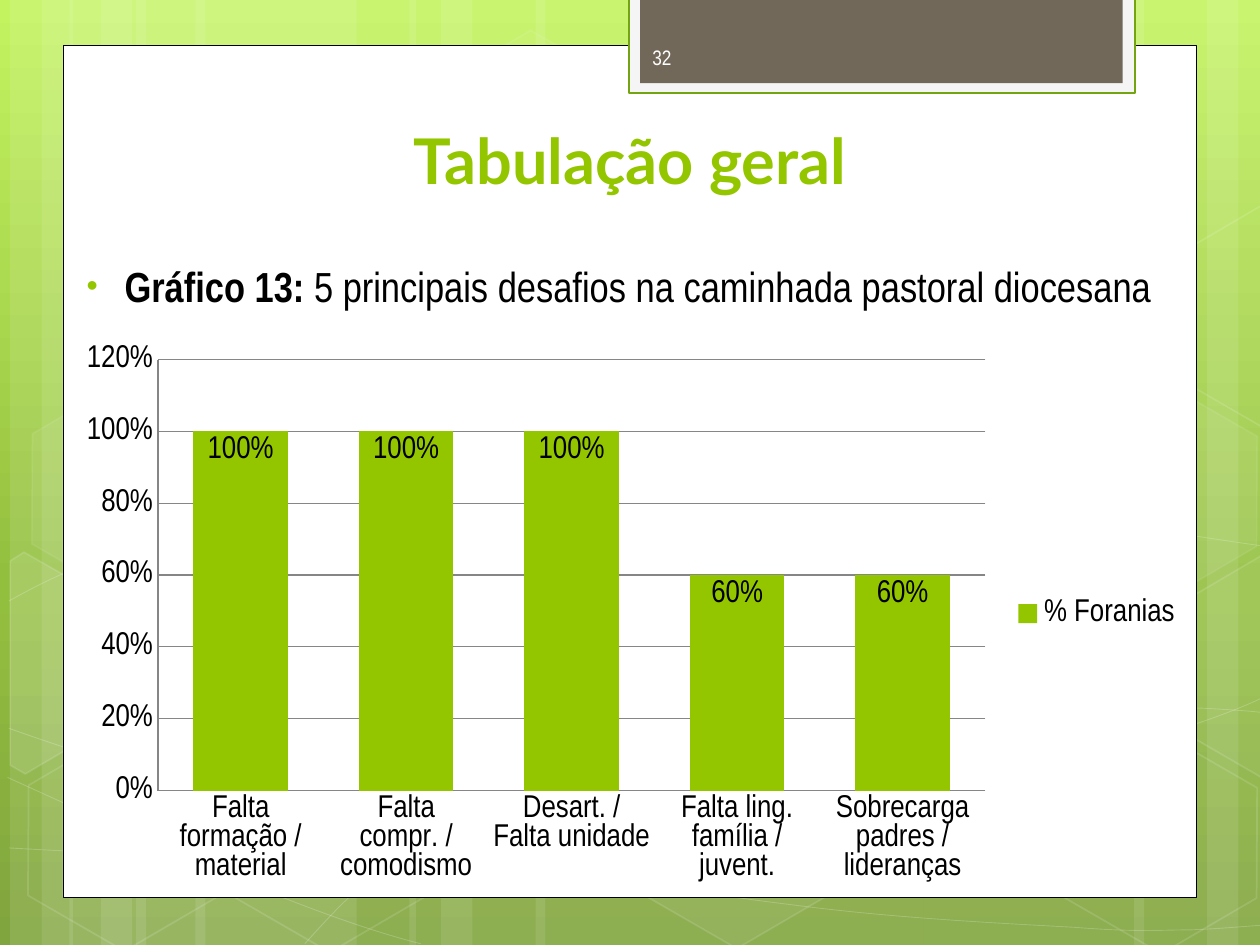
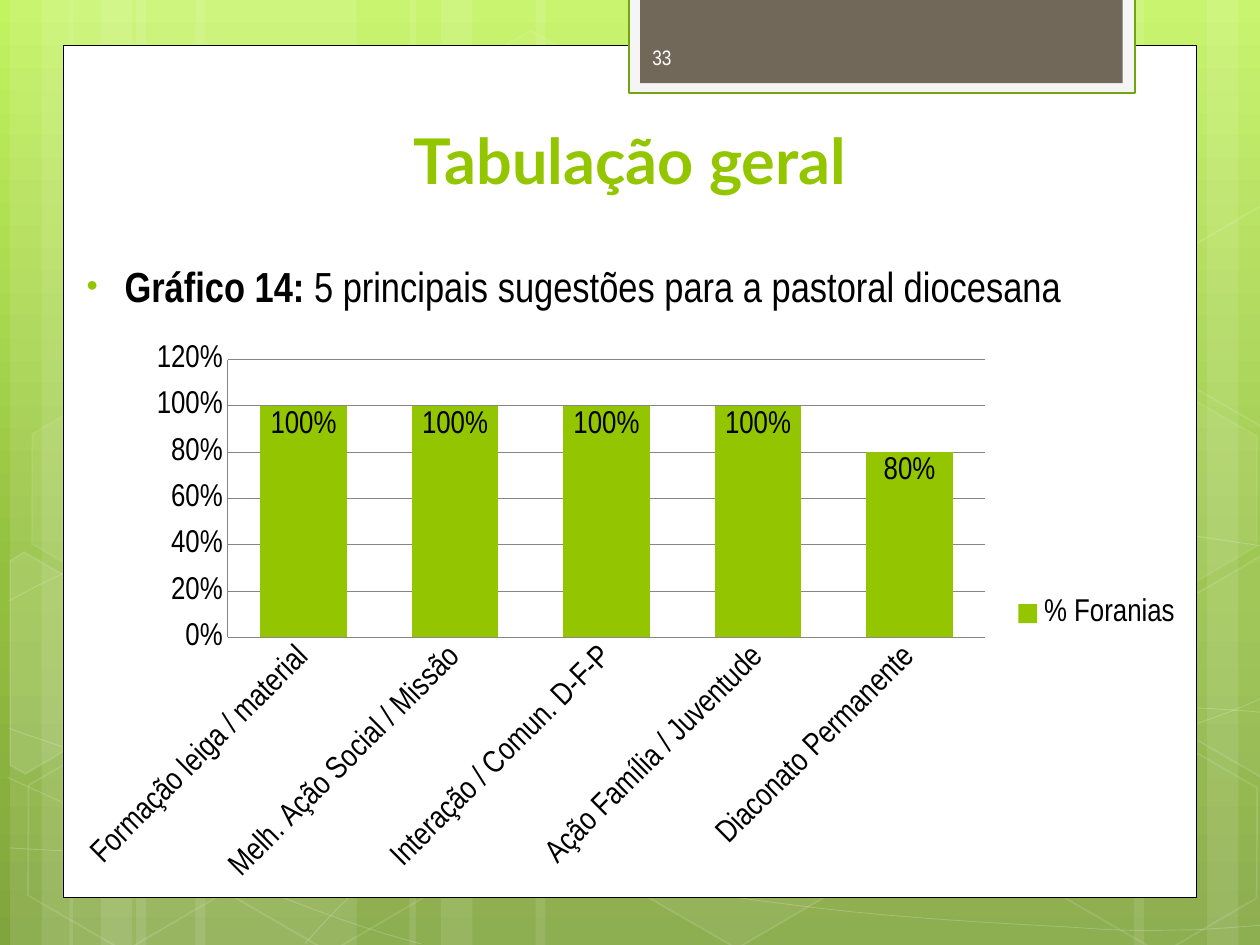
from math import cos, radians, sin

from lxml.etree import SubElement
from pptx import Presentation
from pptx.chart.data import CategoryChartData
from pptx.dml.color import RGBColor
from pptx.enum.chart import XL_CHART_TYPE, XL_LABEL_POSITION, XL_LEGEND_POSITION, XL_TICK_MARK
from pptx.enum.shapes import MSO_SHAPE as SHAPE
from pptx.enum.text import MSO_ANCHOR as ANCHOR, PP_ALIGN as ALIGN
from pptx.oxml.ns import qn
from pptx.util import Inches, Pt

WHITE = RGBColor(0xFF, 0xFF, 0xFF)
BLACK = RGBColor(0x00, 0x00, 0x00)
GREEN = RGBColor(0x94, 0xC6, 0x00)
DARK_GREEN = RGBColor(0x74, 0xA5, 0x10)
GREY = RGBColor(0x86, 0x86, 0x86)
PALE = RGBColor(0xF5, 0xF5, 0xF5)
BROWN = RGBColor(0x71, 0x68, 0x5A)
NUMBER_WHITE = RGBColor(0xFE, 0xFE, 0xFE)
BACKGROUND = [(0, "C3F35F"), (62, "93BF3F"), (100, "81A53E")]
BODY_FONT, TITLE_FONT = "Arial Narrow", "Lato"

# Backdrop: stripes as (left, width)
STRIPES = [(1.08, 1.75), (0.08, 0.5), (0.33, 0.83), (1.55, 1.75), (0.55, 0.5), (0.8, 0.83),
           (7.33, 1.75), (9.58, 0.5), (9, 0.83), (4.25, 3.08), (3.25, 0.5), (3.5, 0.83)]

# Backdrop: curves as a start point, then two control points and an end point for each arc
CURVES = [
    [(0.07, 6.73), (0.61, 6.76), (1.15, 6.79), (1.9, 6.78), (2.65, 6.77), (3.58, 6.75), (4.58, 6.65),
     (5.58, 6.55), (7, 6.36), (7.92, 6.17), (8.83, 5.98), (9.77, 5.68), (10.07, 5.51)],
    [(0.07, 4.77), (0.36, 4.61), (0.65, 4.46), (1.21, 4.31), (1.78, 4.16), (2.59, 3.94), (3.47, 3.87),
     (4.36, 3.8), (5.44, 3.79), (6.54, 3.87), (7.64, 3.95), (9.47, 4.26), (10.07, 4.34)],
    [(0.06, 6.17), (1.27, 6.72), (2.47, 7.27), (3.34, 7.49)],
    [(0.07, 5.78), (0.38, 5.89), (0.7, 6), (1.28, 6.16), (1.86, 6.31), (2.73, 6.56), (3.57, 6.73),
     (4.4, 6.9), (5.45, 7.08), (6.28, 7.18), (7.11, 7.29), (8, 7.33), (8.53, 7.36),
     (9.05, 7.4), (9.19, 7.38), (9.45, 7.38), (9.71, 7.37), (9.89, 7.35), (10.07, 7.34)],
    [(2.42, 7.49), (2.6, 7.29), (2.78, 7.09), (3.02, 6.91), (3.26, 6.73), (3.6, 6.53), (3.88, 6.39),
     (4.16, 6.25), (4.33, 6.19), (4.7, 6.09), (5.06, 5.99), (5.73, 5.85), (6.08, 5.78),
     (6.44, 5.71), (6.49, 5.71), (6.8, 5.69), (7.11, 5.66), (7.6, 5.63), (7.94, 5.62),
     (8.29, 5.61), (8.86, 5.62), (8.86, 5.62), (8.86, 5.62), (9.53, 5.62), (9.53, 5.62),
     (9.71, 5.63), (9.88, 5.64), (9.97, 5.65), (10.06, 5.66), (10.03, 5.65), (10.06, 5.66)],
]

# Backdrop: hexagons as (left, top, fill opacity, line opacity)
TILT = 30
HEXAGONS = [(3.34, 0.36, 4, 8), (4.97, 5.89, 6, 12), (0.11, 5.91, 0, 12), (0.14, 3.12, 7, 8),
            (1.74, 5.92, 0, 12), (7.53, 4.53, 10, 12), (8.34, 5.93, 0, 12), (8.34, 3.14, 7, 8)]

# Backdrop: hexagons cut by the slide edge as (fill opacity, centre, corners after tilting)
CUT_HEXAGONS = [
    (10, (0.36, 5.35),
     [(0.08, 4.45), (0.19, 4.38), (0.96, 4.82), (0.95, 5.7), (0.2, 6.14), (0.08, 6.07)]),
    (4, (9.85, 5.2),
     [(9.26, 4.85), (10.01, 4.41), (10.09, 4.46), (10.09, 6.13), (10.02, 6.17), (9.26, 5.73)]),
    (0, (9.85, 2.41),
     [(9.26, 2.07), (10.01, 1.63), (10.1, 1.68), (10.09, 3.35), (10.02, 3.39), (9.26, 2.95)]),
]

# Panel and number tab as (left, top, width, height, fill, line, line width)
PANELS = [(0.5, 0.36, 9, 6.76, WHITE, BLACK, 0.5),
          (4.99, -0.02, 4.02, 0.76, PALE, DARK_GREEN, 1.25),
          (5.08, -0.02, 3.83, 0.68, BROWN, None, 0)]

# Slides as (number, chart label, caption, label angle, data)
SLIDES = [
    (32, "Gráfico 13:", " 5 principais desafios na caminhada pastoral diocesana", 0,
     {"Falta formação / material": 1, "Falta compr. / comodismo": 1, "Desart. / Falta unidade": 1,
      "Falta ling. família / juvent.": 0.6, "Sobrecarga padres / lideranças": 0.6}),
    (33, "Gráfico 14:", " 5 principais sugestões para a pastoral diocesana", -45,
     {"Formação leiga / material": 1, "Melh. Ação Social / Missão": 1, "Interação / Comun. D-F-P": 1,
      "Ação Família / Juventude": 1, "Diaconato Permanente": 0.8}),
]


def paint(sp, fill=None, opacity=100, line=None, width=1, line_opacity=100):
    """Set fill and line, with opacities in percent."""
    sp.shadow.inherit = False
    for target, color, percent in ((sp.fill, fill, opacity), (sp.line.fill, line, line_opacity)):
        if color is None or percent == 0:
            target.background()
            continue
        target.solid()
        target.fore_color.rgb = color
        if percent < 100:
            parent = sp.element.spPr if color is fill and target is not sp.line.fill else None
            if target is not sp.fill:
                parent = sp.element.spPr.find(qn("a:ln"))
            clr = parent.find(qn("a:solidFill"))[0]
            SubElement(clr, qn("a:alpha")).set("val", str(percent * 1000))
    if line is not None:
        sp.line.width = Pt(width)


def add_text(s, runs, box, size, color, font=BODY_FONT, align=ALIGN.LEFT, anchor=ANCHOR.TOP):
    """Add one paragraph made of (text, bold) runs."""
    tf = s.shapes.add_textbox(*map(Inches, box)).text_frame
    tf.word_wrap = True
    tf.vertical_anchor = anchor
    p = tf.paragraphs[0]
    p.alignment = align
    for text, bold in runs:
        r = p.add_run()
        r.text = text
        r.font.name, r.font.size, r.font.bold = font, Pt(size), bold
        r.font.color.rgb = color
    return p


prs = Presentation()
prs.slide_width, prs.slide_height = Inches(10), Inches(7.5)
master = prs.slide_master
slides = [prs.slides.add_slide(prs.slide_layouts[6]) for _ in SLIDES]

# Background gradient on the master
fill = master.background.fill
fill.gradient()
fill.gradient_angle = 270
stops = next(master.element.iter(qn("a:gsLst")))
for stop in list(stops):
    stops.remove(stop)
for position, color in BACKGROUND:
    stop = SubElement(stops, qn("a:gs"), pos=str(position * 1000))
    SubElement(stop, qn("a:srgbClr"), val=color)

# Stripes
shapes = slides[0].shapes
for left, width in STRIPES:
    sp = shapes.add_shape(SHAPE.RECTANGLE, Inches(left), 0, Inches(width), prs.slide_height)
    paint(sp, WHITE, 10)

# Curves: every three straight segments become one Bézier arc
for points in CURVES:
    points = [tuple(map(Inches, point)) for point in points]
    builder = shapes.build_freeform(*points[0])
    builder.add_line_segments(points[1:], close=False)
    sp = builder.convert_to_shape()
    outline = next(sp.element.iter(qn("a:path")))
    segments = outline.findall(qn("a:lnTo"))
    for i, segment in enumerate(segments):
        if i % 3 == 0:
            arc = SubElement(outline, qn("a:cubicBezTo"))
        arc.append(segment[0])
        outline.remove(segment)
    paint(sp, line=WHITE, width=0.5, line_opacity=20)

# Hexagons
for left, top, opacity, line_opacity in HEXAGONS:
    sp = shapes.add_shape(SHAPE.HEXAGON, Inches(left), Inches(top), Inches(1.75), Inches(1.52))
    sp.adjustments[0] = 0.285
    sp.rotation = TILT
    paint(sp, WHITE, opacity, WHITE, 1, line_opacity)
c, d = cos(radians(TILT)), sin(radians(TILT))
for opacity, (cx, cy), corners in CUT_HEXAGONS:
    upright = [(Inches(cx + c * (x - cx) + d * (y - cy)), Inches(cy - d * (x - cx) + c * (y - cy)))
               for x, y in corners]
    builder = shapes.build_freeform(*upright[0])
    builder.add_line_segments(upright[1:], close=True)
    sp = builder.convert_to_shape()
    sp.rotation = TILT
    paint(sp, WHITE, opacity, WHITE, 1, 12)

# Panel and number tab
for *box, color, line, width in PANELS:
    sp = shapes.add_shape(SHAPE.RECTANGLE, *map(Inches, box))
    paint(sp, color, line=line, width=width)

# Move the backdrop to the master, which all slides share
tree = master.shapes.element if hasattr(master.shapes, "element") else master.element.cSld.spTree
for shape_id, sp in enumerate(list(shapes), start=100):
    sp.element.nvSpPr.cNvPr.set("id", str(shape_id))
    tree.append(sp.element)

for s, (number, label, caption, angle, data) in zip(slides, SLIDES):
    # Caption with bullet
    p = add_text(s, [(label, True), (caption, False)], (0.51, 2.02, 8.98, 5.12), 24, BLACK)
    p.space_before = p.space_after = Pt(12)
    pPr = p._p.get_or_add_pPr()
    pPr.set("marL", str(Inches(0.38)))
    pPr.set("indent", str(Inches(-0.3)))
    SubElement(SubElement(pPr, qn("a:buClr")), qn("a:srgbClr"), val=str(GREEN))
    SubElement(pPr, qn("a:buSzPct"), val="76000")
    SubElement(pPr, qn("a:buFont"), typeface="Arial")
    SubElement(pPr, qn("a:buChar"), char="•")

    # Title and slide number
    add_text(s, [("Tabulação geral", True)], (0.51, 0.36, 8.98, 1.25), 36, GREEN,
             font=TITLE_FONT, align=ALIGN.CENTER, anchor=ANCHOR.BOTTOM)
    add_text(s, [(str(number), False)], (5.08, 0.25, 1.46, 0.4), 12, NUMBER_WHITE, anchor=ANCHOR.MIDDLE)

    # Column chart
    chart_data = CategoryChartData(number_format="0%")
    chart_data.categories = list(data)
    chart_data.add_series("% Foranias", list(data.values()))
    chart = s.shapes.add_chart(XL_CHART_TYPE.COLUMN_CLUSTERED, Inches(0.51), Inches(2.65),
                               Inches(8.98), Inches(4.44), chart_data).chart
    chart.has_title = False
    chart.font.name, chart.font.size = BODY_FONT, Pt(18)
    chart.font.color.rgb = BLACK
    chart.has_legend = True
    chart.legend.position = XL_LEGEND_POSITION.RIGHT
    chart.legend.include_in_layout = False

    plot = chart.plots[0]
    plot.gap_width, plot.overlap, plot.vary_by_categories = 75, 40, False
    series = plot.series[0]
    series.format.fill.solid()
    series.format.fill.fore_color.rgb = GREEN
    labels = series.data_labels
    labels.show_value = True
    labels.number_format, labels.number_format_is_linked = "0%", False
    labels.position = XL_LABEL_POSITION.INSIDE_END

    for axis in (chart.category_axis, chart.value_axis):
        axis.major_tick_mark = axis.minor_tick_mark = XL_TICK_MARK.NONE
        axis.format.line.color.rgb = GREY
        axis.tick_labels.font.size = Pt(18)
    chart.value_axis.major_gridlines.format.line.color.rgb = GREY
    tick_labels = chart.value_axis.tick_labels
    tick_labels.number_format, tick_labels.number_format_is_linked = "0%", False
    body = next(chart.category_axis._element.iter(qn("a:bodyPr")))
    body.set("rot", str(angle * 60000))
    body.set("vert", "horz")

prs.save("out.pptx")
